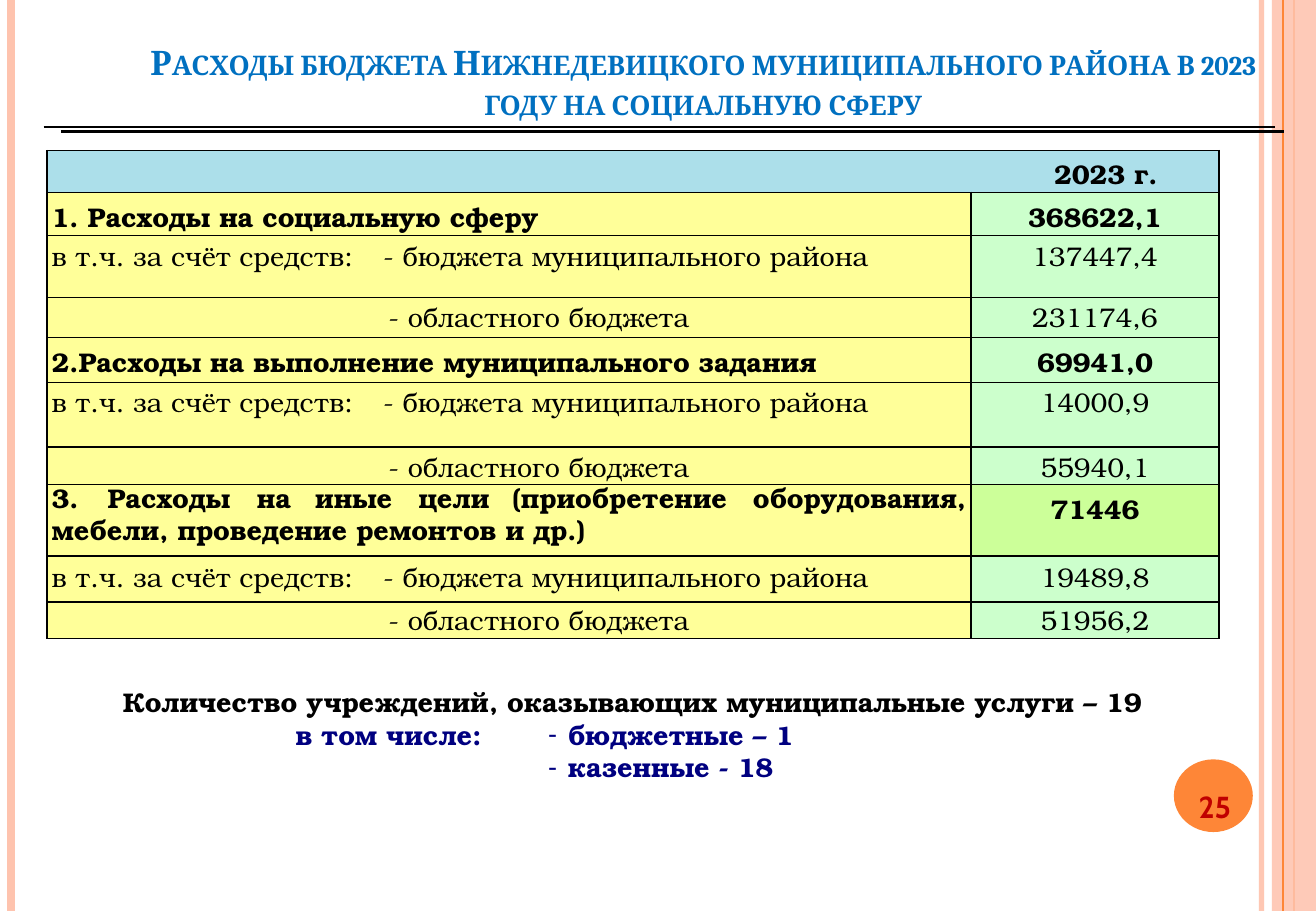
"""Build the slide on the district's 2023 social spending."""
from dataclasses import dataclass
from typing import Any

import lxml.etree
import pptx
import pptx.dml.color
import pptx.enum.shapes
import pptx.enum.text
import pptx.oxml.ns
import pptx.util

Cm = pptx.util.Cm
Pt = pptx.util.Pt
Align = pptx.enum.text.PP_ALIGN
Anchor = pptx.enum.text.MSO_ANCHOR


@dataclass(frozen=True)
class Theme:
    heading_font: str = "Cambria"
    text_font: str = "TeX Gyre Bonum"
    number_font: str = "Cabin"
    heading_size: float = 20
    text_size: float = 16
    number_size: float = 18
    heading: str = "0070C0"
    ink: str = "000000"
    navy: str = "000080"
    number: str = "C00000"
    pink: str = "FEC3AE"
    orange: str = "FE8637"
    header_fill: str = "ACDFEA"
    label_fill: str = "FFFF99"
    amount_fill: str = "CCFFCC"
    accent_fill: str = "CCFF99"


THEME = Theme()


@dataclass(frozen=True)
class TextStyle:
    font: str = THEME.text_font
    size: float = THEME.text_size
    color: str = THEME.ink
    bold: bool = True
    align: Any = Align.LEFT
    margin: float = 0
    hanging: float = 0
    bullet: str = ""
    tabs: tuple[float, ...] = ()
    line_points: float = 0
    small_caps: bool = False


@dataclass(frozen=True)
class Rule:
    start: tuple[float, float]
    end: tuple[float, float]
    color: str
    width: float
    opacity: int = 100


@dataclass(frozen=True)
class BudgetRow:
    label: str
    amount: str
    height: float
    top: float
    bold: bool = False
    margin: float = 0.1
    tabs: tuple[float, ...] = ()
    line_points: float = 0
    label_top: float | None = None
    amount_fill: str = THEME.amount_fill


WIDTH, HEIGHT = 27.51, 19.05
TITLE = "Расходы бюджета Нижнедевицкого муниципального района в 2023 году на социальную сферу"
DISTRICT = "в т.ч. за счёт средств:\t- бюджета муниципального района"
REGION = "- областного бюджета"
DISTRICT_TABS = (6.93,)
REGION_MARGIN = 7.14
HEADER_HEIGHT = 0.73
COLUMNS = (19.32, 5.18)
ROWS = (
    BudgetRow("1. Расходы на социальную сферу", "368622,1", 0.88, 0.08, True),
    BudgetRow(DISTRICT, "137447,4", 1.3, 0.05, tabs=DISTRICT_TABS),
    BudgetRow(REGION, "231174,6", 0.83, 0.03, margin=REGION_MARGIN),
    BudgetRow("2.Расходы на выполнение муниципального задания", "69941,0", 0.94, 0.08, True),
    BudgetRow(DISTRICT, "14000,9", 1.35, 0.03, tabs=DISTRICT_TABS),
    BudgetRow(REGION, "55940,1", 0.73, 0.03, margin=REGION_MARGIN),
    BudgetRow(
        "3.\tРасходы\tна\tиные\tцели\t(приобретение\tоборудования, мебели, проведение ремонтов и др.)",
        "71446", 1.5, 0.08, True, tabs=(1.17, 4.29, 5.51, 7.67, 9.63, 14.66),
        line_points=19.1, label_top=0, amount_fill=THEME.accent_fill,
    ),
    BudgetRow(DISTRICT, "19489,8", 0.96, 0.05, tabs=DISTRICT_TABS),
    BudgetRow(REGION, "51956,2", 0.71, 0, margin=REGION_MARGIN),
)
SIDE_RULES = (
    Rule((26.37, 0), (26.37, HEIGHT), THEME.pink, 3, 93),
    Rule((0.23, 0), (0.23, HEIGHT), THEME.pink, 4.5),
    Rule((27.05, 0), (27.05, HEIGHT), THEME.orange, 1.5),
)
STRIPE_RULE = Rule((26.82, 0), (26.82, HEIGHT), THEME.orange, 0.75)
TITLE_RULES = (
    Rule((1.27, 2.75), (26.84, 2.75), THEME.ink, 1.35),
    Rule((0.91, 2.66), (26.66, 2.66), THEME.ink, 1.35),
)


def rgb(color: str) -> Any:
    """Return the colour for a hexadecimal string."""
    return pptx.dml.color.RGBColor.from_string(color)


def add_element(parent: Any, tag: str, **attributes: str) -> Any:
    """Append an XML element to its parent."""
    return lxml.etree.SubElement(parent, pptx.oxml.ns.qn(tag), attributes)


def set_opacity(shape: Any, percent: int) -> None:
    """Make the explicit colours of a shape translucent."""
    for color in shape._element.spPr.iter(pptx.oxml.ns.qn("a:srgbClr")):
        add_element(color, "a:alpha", val=str(percent * 1000))


def write(paragraph: Any, text: str, style: TextStyle) -> None:
    """Put styled text in a paragraph."""
    if text:
        paragraph.add_run().text = text
    properties = paragraph._p.get_or_add_pPr()
    properties.set("marL", str(Cm(style.margin)))
    if style.bullet:
        properties.set("indent", str(Cm(-style.hanging)))
        add_element(add_element(properties, "a:buClr"), "a:srgbClr", val=style.color)
        add_element(properties, "a:buChar", char=style.bullet)
    if style.tabs:
        tab_list = add_element(properties, "a:tabLst")
        for position in style.tabs:
            add_element(tab_list, "a:tab", pos=str(Cm(position)), algn="l")
    paragraph.alignment = style.align
    paragraph.space_before = Pt(0)
    if style.line_points:
        paragraph.line_spacing = Pt(style.line_points)
    font = paragraph.font
    font.name, font.size, font.bold = style.font, Pt(style.size), style.bold
    font.color.rgb = rgb(style.color)
    if style.small_caps:
        properties.find(pptx.oxml.ns.qn("a:defRPr")).set("cap", "small")
    ending = add_element(paragraph._p, "a:endParaRPr", sz=str(int(style.size * 100)))
    add_element(ending, "a:latin", typeface=style.font)


def fill_box(shape: Any, box: tuple[float, ...], lines: tuple[str, ...], style: TextStyle,
             top: float = 0, anchor: Any = Anchor.TOP) -> None:
    """Place a text shape and write its lines."""
    shape.left, shape.top, shape.width, shape.height = map(Cm, box)
    frame = shape.text_frame
    frame.word_wrap = True
    frame.auto_size = pptx.enum.text.MSO_AUTO_SIZE.NONE
    frame.margin_left = frame.margin_right = frame.margin_bottom = Cm(0)
    frame.margin_top = Cm(top)
    frame.vertical_anchor = anchor
    for index, line in enumerate(lines):
        write(frame.add_paragraph() if index else frame.paragraphs[0], line, style)


def add_rule(slide: Any, rule: Rule) -> None:
    """Draw a straight line."""
    connector = slide.shapes.add_connector(
        pptx.enum.shapes.MSO_CONNECTOR.STRAIGHT, *map(Cm, rule.start + rule.end))
    connector.line.color.rgb = rgb(rule.color)
    connector.line.width = Pt(rule.width)
    add_element(connector._element.spPr, "a:effectLst")
    if rule.opacity < 100:
        set_opacity(connector, rule.opacity)


def add_block(slide: Any, kind: Any, box: tuple[float, ...], color: str) -> Any:
    """Draw a filled shape without an outline."""
    shape = slide.shapes.add_shape(kind, *map(Cm, box))
    shape.shadow.inherit = False
    shape.fill.solid()
    shape.fill.fore_color.rgb = rgb(color)
    shape.line.fill.background()
    return shape


def fill_cell(cell: Any, text: str, style: TextStyle, fill: str, top: float, right: float = 0) -> None:
    """Set the margins, borders, fill and text of a cell."""
    cell.margin_left = cell.margin_bottom = Cm(0)
    cell.margin_top, cell.margin_right = Cm(top), Cm(right)
    properties = cell._tc.get_or_add_tcPr()
    for side in ("a:lnL", "a:lnR", "a:lnT", "a:lnB"):
        border = add_element(properties, side, w=str(Pt(1)))
        add_element(add_element(border, "a:solidFill"), "a:srgbClr", val=THEME.ink)
    cell.fill.solid()
    cell.fill.fore_color.rgb = rgb(fill)
    write(cell.text_frame.paragraphs[0], text, style)


def add_budget_table(slide: Any) -> None:
    """Draw the table of spending."""
    heights = (HEADER_HEIGHT, *(row.height for row in ROWS))
    table = slide.shapes.add_table(
        len(heights), len(COLUMNS), Cm(0.98), Cm(3.15), Cm(sum(COLUMNS)), Cm(sum(heights))).table
    table.first_row = table.horz_banding = False
    for column, width in zip(table.columns, COLUMNS):
        column.width = Cm(width)
    for table_row, height in zip(table.rows, heights):
        table_row.height = Cm(height)
    table.cell(0, 0).merge(table.cell(0, 1))
    for cell, text in zip(table.rows[0].cells, ("2023 г.", "")):
        fill_cell(cell, text, TextStyle(align=Align.RIGHT), THEME.header_fill, 0.05, 1.28)
    for index, row in enumerate(ROWS, start=1):
        label, amount = table.rows[index].cells
        label_style = TextStyle(
            bold=row.bold, margin=row.margin, tabs=row.tabs, line_points=row.line_points)
        label_top = row.top if row.label_top is None else row.label_top
        fill_cell(label, row.label, label_style, THEME.label_fill, label_top)
        fill_cell(amount, row.amount, TextStyle(bold=row.bold, align=Align.CENTER),
                  row.amount_fill, row.top)


def main() -> None:
    """Build and save the presentation."""
    presentation = pptx.Presentation()
    presentation.slide_width, presentation.slide_height = Cm(WIDTH), Cm(HEIGHT)
    slide = presentation.slides.add_slide(presentation.slide_layouts[1])
    shapes = slide.shapes
    for rule in SIDE_RULES:
        add_rule(slide, rule)
    kinds = pptx.enum.shapes.MSO_SHAPE
    set_opacity(add_block(slide, kinds.RECTANGLE, (26.59, 0, 0.92, HEIGHT), THEME.pink), 87)
    for rule in (STRIPE_RULE, *TITLE_RULES):
        add_rule(slide, rule)
    add_block(slide, kinds.OVAL, (24.54, 15.88, 1.65, 1.52), THEME.orange)
    add_budget_table(slide)

    fill_box(shapes.title, (0.81, -0.11, 25.88, 2.67), (TITLE,), TextStyle(
        THEME.heading_font, THEME.heading_size, THEME.heading, align=Align.CENTER,
        margin=1.9, small_caps=True), 0.97, Anchor.BOTTOM)
    fill_box(slide.placeholders[1], (11.42, 15.02, 6.73, 1.37), ("бюджетные – 1", "казенные - 18"),
             TextStyle(color=THEME.navy, margin=0.45, hanging=0.41, bullet="-"))
    captions = (
        ((2.57, 14.34, 21.82, 0.69), "Количество учреждений, оказывающих муниципальные услуги – 19",
         THEME.ink),
        ((6.18, 15.02, 3.96, 0.71), "в том числе:", THEME.navy),
    )
    for box, text, color in captions:
        fill_box(shapes.add_textbox(*map(Cm, box)), box, (text,), TextStyle(color=color))
    number_box = (24.48, 16.07, 1.83, 1.17)
    fill_box(shapes.add_textbox(*map(Cm, number_box)), number_box, ("25",), TextStyle(
        THEME.number_font, THEME.number_size, THEME.number, align=Align.CENTER), 0.41, Anchor.MIDDLE)
    presentation.save("out.pptx")


if __name__ == "__main__":
    main()
